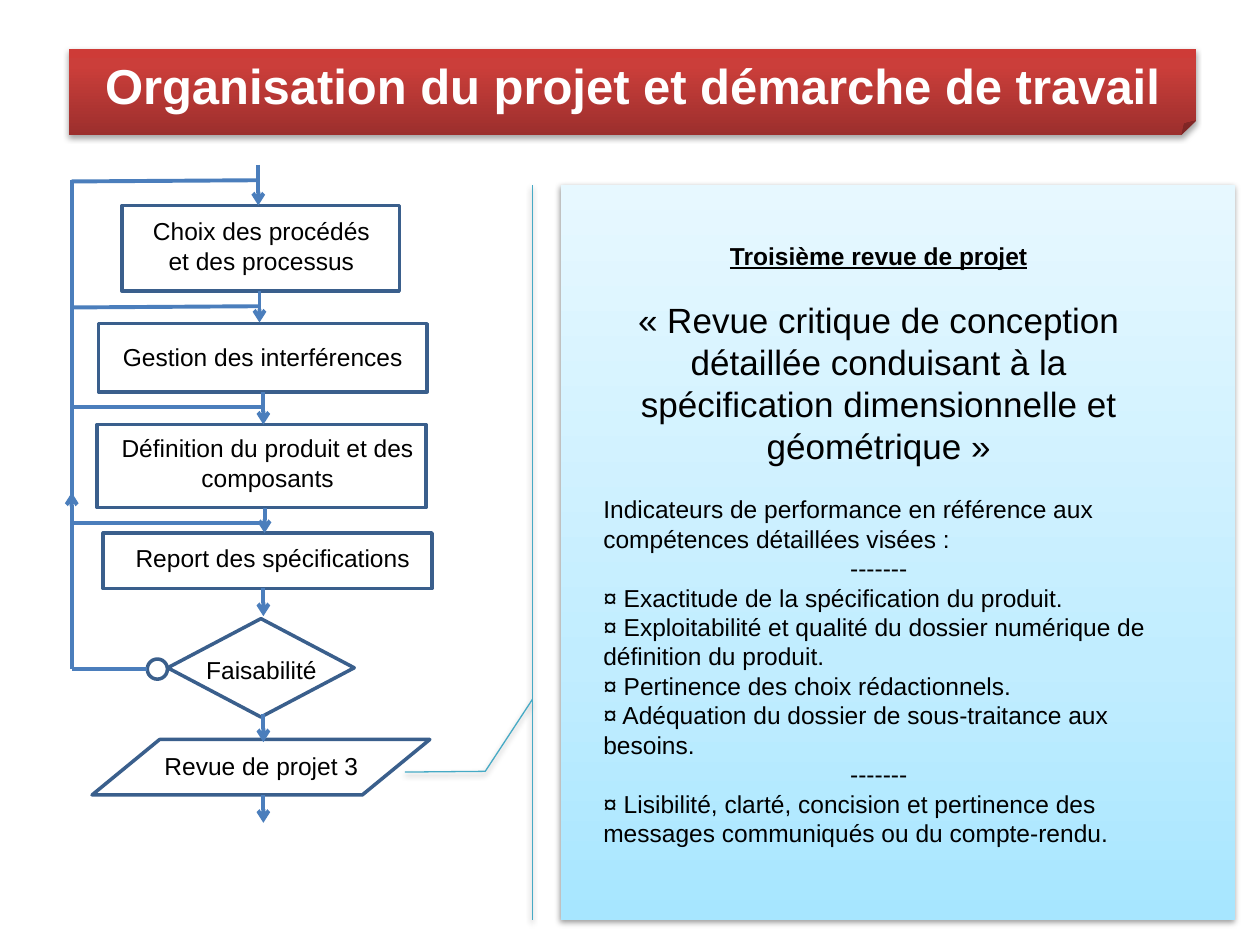
import pptx
import pptx.util
import pptx.dml.color
import pptx.enum.shapes
import pptx.enum.text
import pptx.oxml
import pptx.oxml.ns

Pt = pptx.util.Pt
SHAPES = pptx.enum.shapes.MSO_SHAPE
ALIGN = pptx.enum.text.PP_ALIGN
ANCHOR = pptx.enum.text.MSO_ANCHOR
COLORS = {
    "text": "000000",
    "white": "FFFFFF",
    "outline": "3A5F8C",
    "arrow": "4B7EBC",
    "callout": "46AAC5",
}
PANEL_STOPS = [(0, "A7E6FF"), (35, "C1EDFF"), (100, "E7F8FF")]
BANNER_STOPS = [(0, "9C2F2D"), (80, "CB3E3A"), (100, "CE3B37")]


def rgb(name):
    return pptx.dml.color.RGBColor.from_string(COLORS[name])


def add_xml(parent, tag, **attributes):
    child = parent.makeelement(pptx.oxml.ns.qn(tag), {})
    for key, value in attributes.items():
        child.set(key, str(value))
    parent.append(child)
    return child


def write(para, text, size=14, color="text", bold=False, underline=False,
          align=ALIGN.CENTER, before=0):
    para.alignment = align
    para.space_before = Pt(before)
    span = para.add_run()
    span.text = text
    span.font.name = "Arial"
    span.font.size = Pt(size)
    span.font.bold = bold
    span.font.underline = underline
    span.font.color.rgb = rgb(color)


class SlideBuilder:
    def __init__(self, slide):
        self.slide = slide
        self.outline_width = 2
        self.arrow_width = 2.25

    def shape(self, kind, place, line="outline", width=None):
        shape = self.slide.shapes.add_shape(kind, *map(Pt, place))
        shape.shadow.inherit = False
        shape.fill.background()
        if line:
            shape.line.color.rgb = rgb(line)
            shape.line.width = Pt(width or self.outline_width)
        else:
            shape.line.fill.background()
        return shape

    def raised(self, kind, place, stops, opacity, distance, **line):
        """Shape with a bottom-to-top gradient and a soft shadow below."""
        shape = self.shape(kind, place, **line)
        shape.fill.gradient()
        shape.fill.gradient_angle = 90
        properties = shape._element.spPr
        stop_list = properties.find(".//" + pptx.oxml.ns.qn("a:gsLst"))
        for stop in list(stop_list):
            stop_list.remove(stop)
        for position, color in stops:
            stop = add_xml(stop_list, "a:gs", pos=position * 1000)
            add_xml(stop, "a:srgbClr", val=color)
        effects = properties.find(pptx.oxml.ns.qn("a:effectLst"))
        shadow = add_xml(effects, "a:outerShdw", blurRad=Pt(3.1),
                         dist=Pt(distance), dir=90 * 60000, rotWithShape=0)
        color = add_xml(shadow, "a:srgbClr", val=COLORS["text"])
        add_xml(color, "a:alpha", val=opacity * 1000)
        return shape

    def text(self, place, paragraphs):
        box = self.slide.shapes.add_textbox(*map(Pt, place))
        frame = box.text_frame
        frame.word_wrap = True
        for index, (text, style) in enumerate(paragraphs):
            para = frame.add_paragraph() if index else frame.paragraphs[0]
            write(para, text, **style)

    def line(self, x1, y1, x2, y2, arrow=False):
        line = self.slide.shapes.add_connector(
            pptx.enum.shapes.MSO_CONNECTOR.STRAIGHT, *map(Pt, (x1, y1, x2, y2)))
        line.line.color.rgb = rgb("arrow")
        line.line.width = Pt(self.arrow_width)
        if arrow:
            add_xml(line.line._get_or_add_ln(), "a:tailEnd", type="arrow")
        add_xml(line._element.spPr, "a:effectLst")


def add_review_panel(builder):
    callout = builder.raised(SHAPES.LINE_CALLOUT_2_ACCENT_BAR,
                             (320.4, 105.8, 385.2, 419.8), PANEL_STOPS, 38, 1.6,
                             line="callout", width=0.75)
    for index, value in enumerate((0.7, -0.042, 0.798, -0.112, 0.799, -0.231)):
        callout.adjustments[index] = value
    left = {"align": ALIGN.LEFT}
    gap = 16.1  # one line of 14 pt text
    builder.text((337.7, 133.9, 329, 390.2), [
        ("Troisième revue de projet", {"bold": True, "underline": True}),
        ("«\u00a0Revue critique de conception détaillée conduisant à la "
         "spécification dimensionnelle et géométrique »",
         {"size": 20, "before": gap}),
        ("Indicateurs de performance en référence aux compétences détaillées "
         "visées :", {"before": gap, **left}),
        ("-------", {}),
        ("¤ Exactitude de la spécification du produit.", left),
        ("¤ Exploitabilité et qualité du dossier numérique de définition du "
         "produit.", left),
        ("¤ Pertinence des choix rédactionnels.", left),
        ("¤ Adéquation du dossier de sous-traitance aux besoins.", left),
        ("-------", {}),
        ("¤ Lisibilité, clarté, concision et pertinence des messages "
         "communiqués ou du compte-rendu.", left),
    ])


def add_banner(builder):
    banner = builder.raised(SHAPES.FOLDED_CORNER, (39.6, 28.1, 643.7, 49),
                            BANNER_STOPS, 35, 1.8, line=None)
    frame = banner.text_frame
    frame.word_wrap = True
    frame.vertical_anchor = ANCHOR.MIDDLE
    write(frame.paragraphs[0], "Organisation du projet et démarche de travail",
          size=28, color="white", bold=True)


def add_flowchart(builder):
    process = SHAPES.FLOWCHART_PROCESS
    steps = [
        (process, (69.8, 117.4, 158.4, 49),
         "Choix des procédés et des processus", (72.7, 120.2, 153.4, 41)),
        (process, (56.2, 185, 187.9, 38.9),
         "Gestion des interférences", (38.2, 192.2, 223.9, 19.4)),
        (process, (55.4, 242.6, 187.9, 47.5),
         "Définition du produit et des composants", (41, 244.1, 223.9, 41)),
        (process, (59, 304.6, 187.9, 31.7),
         "Report des spécifications", (43.9, 306.7, 223.9, 24.5)),
        (SHAPES.FLOWCHART_DECISION, (95.8, 353.5, 106.6, 56.2),
         "Faisabilité", (104.4, 370.8, 90, 24.5)),
        (SHAPES.FLOWCHART_DATA, (52.6, 422.6, 193, 31.7),
         "Revue de projet 3", (72.7, 425.5, 153.4, 24.5)),
    ]
    for kind, place, label, label_place in steps:
        builder.shape(kind, place)
        builder.text(label_place, [(label, {})])
    builder.shape(SHAPES.OVAL, (84.2, 376.6, 11.5, 11.5))

    down_arrows = [(147.6, 94.3, 117.4), (148.3, 166.3, 184.3),
                   (150.5, 223.9, 242.6), (151.2, 290.2, 304.6),
                   (150.5, 336.2, 352.1), (150.5, 408.2, 424.1),
                   (150.5, 454.3, 470.2)]
    for x, top, bottom in down_arrows:
        builder.line(x, top, x, bottom, arrow=True)

    loop_x, loop_bottom = 41, 382.3
    builder.line(loop_x, loop_bottom, loop_x, 281.5, arrow=True)
    builder.line(loop_x, 287.3, loop_x, 103)
    branches = [(84.2, loop_bottom, loop_bottom), (150.5, 298.8, 298.8),
                (150.5, 232.6, 232.6), (147.6, 175, 175.7), (147.6, 103, 103.7)]
    for x, y, loop_y in branches:
        builder.line(x, y, loop_x, loop_y)


def main():
    deck = pptx.Presentation()
    deck.slide_width, deck.slide_height = Pt(720), Pt(540)
    page = deck.slides.add_slide(deck.slide_layouts[6])
    builder = SlideBuilder(page)
    add_review_panel(builder)
    add_banner(builder)
    add_flowchart(builder)
    deck.save("out.pptx")


if __name__ == "__main__":
    main()
